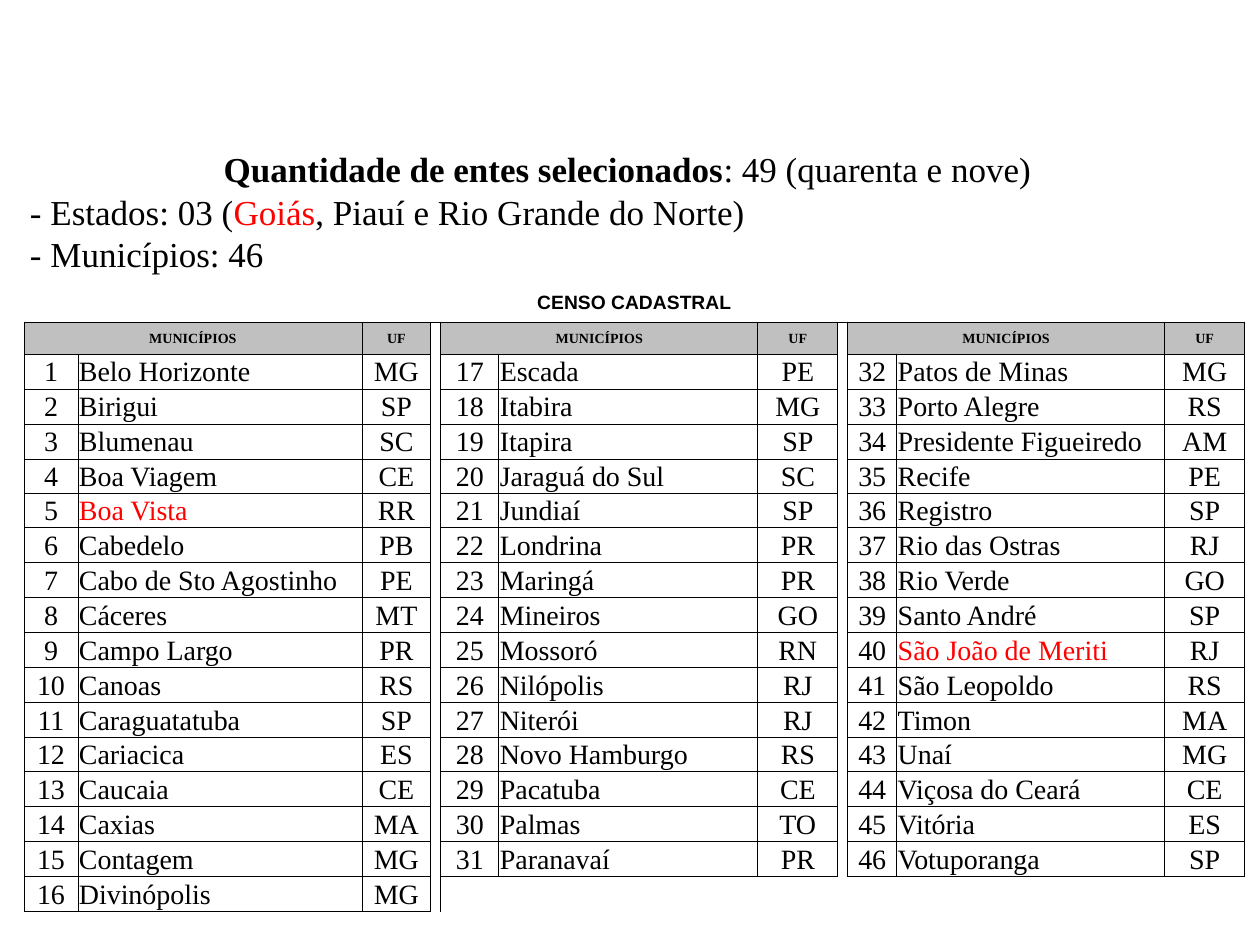
from lxml import etree
from pptx import Presentation
from pptx.dml.color import RGBColor
from pptx.enum.text import MSO_ANCHOR, MSO_AUTO_SIZE, PP_ALIGN
from pptx.oxml.ns import qn
from pptx.util import Pt

CENTER, LEFT, JUSTIFY = PP_ALIGN.CENTER, PP_ALIGN.LEFT, PP_ALIGN.JUSTIFY
MIDDLE, TOP = MSO_ANCHOR.MIDDLE, MSO_ANCHOR.TOP
PX = 914400 // 126
SERIF, SANS = "Times New Roman", "Arial"
COLORS = {"text": "000000", "highlight": "FF0000", "header": "C0C0C0"}
NO_GRID_STYLE = "{2D5ABB26-0587-4C30-8999-92F81FD0307C}"

SUMMARY = [
    (CENTER, [("Quantidade de entes selecionados", {"bold": True}),
              (": 49 (quarenta e nove)", {})]),
    (JUSTIFY, [("- Estados: 03 (", {}), ("Goiás", {"color": "highlight"}),
               (", Piauí e Rio Grande do Norte)", {})]),
    (JUSTIFY, [("- Municípios: 46", {})]),
]
CENSUS_TITLE = "CENSO CADASTRAL"
HEADERS = ("MUNICÍPIOS", "UF")
HIGHLIGHTED = {"Boa Vista", "São João de Meriti"}
BLOCKS = [
    [("Belo Horizonte", "MG"), ("Birigui", "SP"), ("Blumenau", "SC"),
     ("Boa Viagem", "CE"), ("Boa Vista", "RR"), ("Cabedelo", "PB"),
     ("Cabo de Sto Agostinho", "PE"), ("Cáceres", "MT"), ("Campo Largo", "PR"),
     ("Canoas", "RS"), ("Caraguatatuba", "SP"), ("Cariacica", "ES"),
     ("Caucaia", "CE"), ("Caxias", "MA"), ("Contagem", "MG"),
     ("Divinópolis", "MG")],
    [("Escada", "PE"), ("Itabira", "MG"), ("Itapira", "SP"),
     ("Jaraguá do Sul", "SC"), ("Jundiaí", "SP"), ("Londrina", "PR"),
     ("Maringá", "PR"), ("Mineiros", "GO"), ("Mossoró", "RN"),
     ("Nilópolis", "RJ"), ("Niterói", "RJ"), ("Novo Hamburgo", "RS"),
     ("Pacatuba", "CE"), ("Palmas", "TO"), ("Paranavaí", "PR")],
    [("Patos de Minas", "MG"), ("Porto Alegre", "RS"),
     ("Presidente Figueiredo", "AM"), ("Recife", "PE"), ("Registro", "SP"),
     ("Rio das Ostras", "RJ"), ("Rio Verde", "GO"), ("Santo André", "SP"),
     ("São João de Meriti", "RJ"), ("São Leopoldo", "RS"), ("Timon", "MA"),
     ("Unaí", "MG"), ("Viçosa do Ceará", "CE"), ("Vitória", "ES"),
     ("Votuporanga", "SP")],
]

SUMMARY_BOX = (25, 145, 1205, 160)
TABLE_LEFT, TABLE_TOP = 24, 282
COLUMN_WIDTHS = [54, 284, 69, 10, 58, 259, 80, 10, 49, 268, 80]
TITLE_HEIGHT, HEADER_HEIGHT, BODY_HEIGHT = 40, 32, 558
BLOCK_STEP = 4  # three columns and a gap


def write(paragraph, text, size=16, bold=False, color="text", font=SERIF, align=LEFT):
    paragraph.alignment = align
    run = paragraph.add_run()
    run.text = text
    run.font.size, run.font.bold, run.font.name = Pt(size), bold, font
    run.font.color.rgb = RGBColor.from_string(COLORS[color])


def add_summary(slide):
    body = slide.placeholders[1]
    body.left, body.top, body.width, body.height = (v * PX for v in SUMMARY_BOX)
    frame = body.text_frame
    frame.word_wrap, frame.auto_size = True, MSO_AUTO_SIZE.NONE
    frame.vertical_anchor = TOP
    frame.margin_left = frame.margin_bottom = 0
    frame.margin_top, frame.margin_right = 3 * PX, 5 * PX
    for i, (align, runs) in enumerate(SUMMARY):
        paragraph = frame.add_paragraph() if i else frame.paragraphs[0]
        properties = paragraph._p.get_or_add_pPr()
        properties.set("marL", str(53 * PX))
        properties.set("indent", str(-48 * PX))
        etree.SubElement(properties, qn("a:buNone"))
        paragraph.space_before = Pt(0)
        paragraph.line_spacing = Pt(24)
        for text, style in runs:
            write(paragraph, text, size=20, align=align, **style)


def census_contents():
    """Map (row, column) to text and format for every framed cell."""
    contents = {}
    number = 0
    for b, block in enumerate(BLOCKS):
        first = b * BLOCK_STEP
        for column, header in zip((first, first + 2), HEADERS):
            contents[1, column] = (header, {"size": 8, "bold": True, "align": CENTER})
        contents[1, first + 1] = ("", {})
        for row, (city, state) in enumerate(block, start=2):
            number += 1
            color = "highlight" if city in HIGHLIGHTED else "text"
            contents[row, first] = (str(number), {"align": CENTER})
            contents[row, first + 1] = (city, {"color": color})
            contents[row, first + 2] = (state, {"align": CENTER})
    return contents


def draw_border(cell, side):
    line = etree.SubElement(cell._tc.get_or_add_tcPr(), qn(f"a:ln{side}"), w=str(Pt(0.5)))
    fill = etree.SubElement(line, qn("a:solidFill"))
    etree.SubElement(fill, qn("a:srgbClr"), val=COLORS["text"])


def add_census(slide):
    contents = census_contents()
    body_rows = max(len(block) for block in BLOCKS)
    edges = [round(BODY_HEIGHT * i / body_rows) for i in range(body_rows + 1)]
    heights = [TITLE_HEIGHT, HEADER_HEIGHT] + [b - a for a, b in zip(edges, edges[1:])]
    table = slide.shapes.add_table(
        len(heights), len(COLUMN_WIDTHS), TABLE_LEFT * PX, TABLE_TOP * PX,
        sum(COLUMN_WIDTHS) * PX, sum(heights) * PX).table
    table.first_row = table.horz_banding = False
    table._tbl.tblPr.find(qn("a:tableStyleId")).text = NO_GRID_STYLE
    for column, width in zip(table.columns, COLUMN_WIDTHS):
        column.width = width * PX
    for row, height in zip(table.rows, heights):
        row.height = height * PX

    framed = set(contents)
    contents[0, 0] = (CENSUS_TITLE, {"size": 11, "bold": True, "font": SANS, "align": CENTER})
    for r in range(len(heights)):
        for c in range(len(COLUMN_WIDTHS)):
            cell = table.cell(r, c)
            cell.vertical_anchor = MIDDLE
            cell.margin_left = cell.margin_right = cell.margin_top = PX
            cell.margin_bottom = 0
            neighbours = {"L": (r, c - 1), "R": (r, c + 1), "T": (r - 1, c), "B": (r + 1, c)}
            for side, neighbour in neighbours.items():
                if framed & {(r, c), neighbour}:
                    draw_border(cell, side)
            if r == 1 and (r, c) in framed:
                cell.fill.solid()
                cell.fill.fore_color.rgb = RGBColor.from_string(COLORS["header"])
            else:
                cell.fill.background()
            text, style = contents.get((r, c), ("", {}))
            paragraph = cell.text_frame.paragraphs[0]
            if text:
                write(paragraph, text, **style)
            else:
                etree.SubElement(paragraph._p, qn("a:endParaRPr"), sz="800")

    table.cell(0, 0).merge(table.cell(0, len(COLUMN_WIDTHS) - 1))
    for first in range(0, len(COLUMN_WIDTHS), BLOCK_STEP):
        table.cell(1, first).merge(table.cell(1, first + 1))


def main():
    presentation = Presentation()
    presentation.slide_width, presentation.slide_height = 1260 * PX, 945 * PX
    slide = presentation.slides.add_slide(presentation.slide_layouts[1])
    title = slide.shapes.title._element
    title.getparent().remove(title)
    add_summary(slide)
    add_census(slide)
    presentation.save("out.pptx")


if __name__ == "__main__":
    main()
